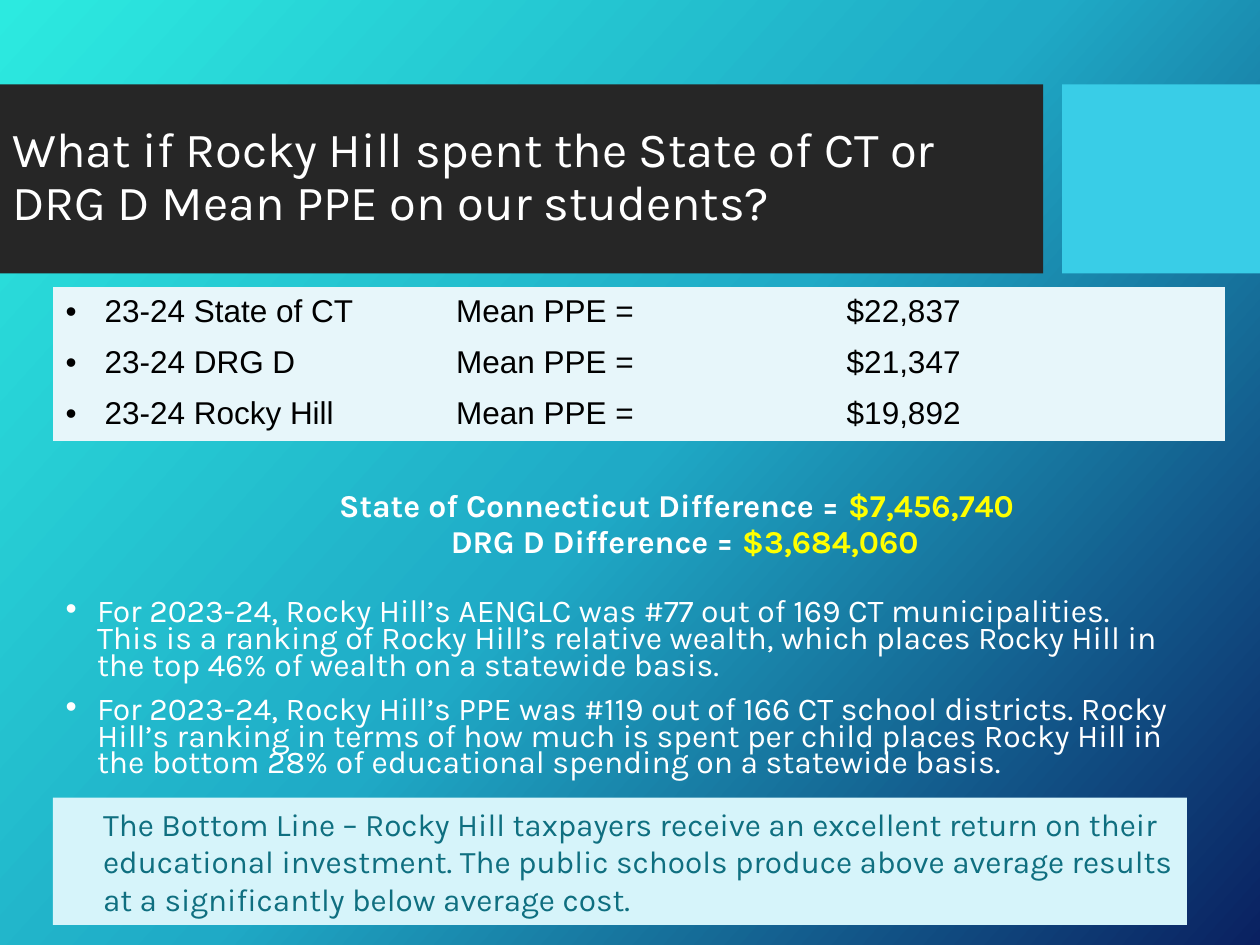
import pptx
import pptx.util
import pptx.oxml
import pptx.oxml.ns
from pptx.dml.color import RGBColor
from pptx.enum.shapes import MSO_SHAPE
from pptx.enum.text import MSO_ANCHOR, MSO_AUTO_SIZE, PP_ALIGN

Inches, Pt = pptx.util.Inches, pptx.util.Pt

# Content
TITLE = "What if Rocky Hill spent the State of CT or DRG D Mean PPE on our students?"
SPENDING = [
    ("23-24 State of CT", "Mean PPE =", "$22,837"),
    ("23-24 DRG D", "Mean PPE =", "$21,347"),
    ("23-24 Rocky Hill", "Mean PPE =", "$19,892"),
]
DIFFERENCES = [  # label, amount, left indent
    ("State of Connecticut Difference = ", "$7,456,740", 0.9),
    ("DRG D Difference = ", "$3,684,060", 1.03),
]
RANKINGS = [  # text, space before
    ("For 2023-24, Rocky Hill’s AENGLC was #77 out of 169 CT municipalities. "
     "This is a ranking of Rocky Hill’s relative wealth, which places Rocky Hill in "
     "the top 46% of wealth on a statewide basis.", 24.3),
    ("For 2023-24, Rocky Hill’s PPE was #119 out of 166 CT school districts. "
     "Rocky Hill’s ranking in terms of how much is spent per child places Rocky Hill in "
     "the bottom 28% of educational spending on a statewide basis.", 10),
]
BOTTOM_LINE = ("The Bottom Line – Rocky Hill taxpayers receive an excellent return on their "
               "educational investment. The public schools produce above average results "
               "at a significantly below average cost.")
BANDS = [(0, 8.28, "262626"), (8.43, 1.57, "39CDE7")]  # left, width, fill

THEME = {
    "gradient": [(0, "2CEAE0"), (50, "1FAAC6"), (100, "0A2161")],
    "angle": 42,
    "cell": "E7F6FA",
    "panel": "D6F4FA",
    "title": {"name": "Karla", "size": Pt(28), "color": "FFFFFF"},
    "body": {"name": "Karla", "size": Pt(18.2), "color": "FFFFFF", "bold": False},
    "label": {"name": "Karla", "size": Pt(18.2), "color": "FFFFFF", "bold": True},
    "amount": {"name": "Karla", "size": Pt(18.2), "color": "FFFF00", "bold": True},
    "table": {"name": "Arial", "size": Pt(18), "color": "000000", "bold": False},
    "panel_text": {"name": "Karla", "size": Pt(18), "color": "0F6F80"},
}
PLAIN_TABLE = "{2D5ABB26-0587-4C30-8999-92F81FD0307C}"


def set_background(s):
    stops = "".join(f'<a:gs pos="{pos * 1000}"><a:srgbClr val="{color}"/></a:gs>'
                    for pos, color in THEME["gradient"])
    s._element.cSld.insert(0, pptx.oxml.parse_xml(
        f'<p:bg {pptx.oxml.ns.nsdecls("p", "a")}><p:bgPr><a:gradFill rotWithShape="1">'
        f'<a:gsLst>{stops}</a:gsLst><a:lin ang="{THEME["angle"] * 60000}" scaled="0"/>'
        '</a:gradFill><a:effectLst/></p:bgPr></p:bg>'))


def place(sp, left, top, width, height):
    sp.left, sp.top, sp.width, sp.height = map(Inches, (left, top, width, height))


def add_run(p, text, style):
    r = p.add_run()
    r.text = text
    for key, value in style.items():
        if key == "color":
            r.font.color.rgb = RGBColor.from_string(value)
        else:
            setattr(r.font, key, value)


def format_paragraph(p, **values):
    for key, value in values.items():
        setattr(p, key, value)


def indent(p, left, hanging=0, bullet=None):
    pPr = p._p.get_or_add_pPr()
    pPr.set("marL", str(Inches(left)))
    pPr.set("indent", str(Inches(-hanging)))
    ns = pptx.oxml.ns.nsdecls("a")
    parts = ([f'<a:buClr {ns}><a:srgbClr val="{bullet}"/></a:buClr>',
              f'<a:buFont {ns} typeface="Arial"/>', f'<a:buChar {ns} char="•"/>']
             if bullet else [f"<a:buNone {ns}/>"])
    for part in parts:
        pPr.append(pptx.oxml.parse_xml(part))


def add_block(s, left, top, width, height, color):
    sp = s.shapes.add_shape(MSO_SHAPE.RECTANGLE, *map(Inches, (left, top, width, height)))
    sp.shadow.inherit = False
    sp.fill.solid()
    sp.fill.fore_color.rgb = RGBColor.from_string(color)
    sp.line.fill.background()
    return sp


def next_paragraph(tf):
    return tf.add_paragraph() if tf.paragraphs[0].runs else tf.paragraphs[0]


def main():
    prs = pptx.Presentation()
    prs.slide_width, prs.slide_height = Inches(10), Inches(7.5)
    s = prs.slides.add_slide(prs.slide_layouts[1])
    set_background(s)

    # Title bands, behind the placeholders
    for i, (left, width, color) in enumerate(BANDS):
        sp = add_block(s, left, 0.67, width, 1.5, color)
        s.shapes._spTree.insert(2 + i, sp._element)

    # Title
    title = s.shapes.title
    place(title, 0, 0.83, 8.33, 1.17)
    tf = title.text_frame
    tf.auto_size, tf.vertical_anchor = MSO_AUTO_SIZE.NONE, MSO_ANCHOR.MIDDLE
    p = tf.paragraphs[0]
    format_paragraph(p, alignment=PP_ALIGN.LEFT, line_spacing=0.9)
    add_run(p, TITLE, THEME["title"])

    # Differences and rankings
    body = s.placeholders[1]
    place(body, 0.42, 3.5, 9, 2.75)
    tf = body.text_frame
    tf.auto_size, tf.vertical_anchor = MSO_AUTO_SIZE.NONE, MSO_ANCHOR.TOP
    tf.margin_top = Inches(0.44)
    for i, (label, amount, left) in enumerate(DIFFERENCES):
        p = next_paragraph(tf)
        format_paragraph(p, alignment=PP_ALIGN.CENTER, line_spacing=0.7,
                         space_before=Pt(5 if i else 0))
        indent(p, left)
        add_run(p, label, THEME["label"])
        add_run(p, amount, THEME["amount"])
    for text, gap in RANKINGS:
        p = next_paragraph(tf)
        format_paragraph(p, line_spacing=0.7, space_before=Pt(gap))
        indent(p, 0.25, 0.25, THEME["body"]["color"])
        add_run(p, text, THEME["body"])

    # Bottom line panel
    panel = add_block(s, 0.42, 6.33, 9, 1.01, THEME["panel"])
    tf = panel.text_frame
    tf.word_wrap = True
    p = tf.paragraphs[0]
    p.alignment = PP_ALIGN.LEFT
    indent(p, 0.3)
    add_run(p, BOTTOM_LINE, THEME["panel_text"])

    # Spending table
    frame = s.shapes.add_table(len(SPENDING), len(SPENDING[0]),
                               *map(Inches, (0.42, 2.28, 9.3, 1.22)))
    table = frame.table
    table.first_row = table.horz_banding = False
    table._tbl.tblPr.find(pptx.oxml.ns.qn("a:tableStyleId")).text = PLAIN_TABLE
    for row, values in zip(table.rows, SPENDING):
        for col, (cell, text) in enumerate(zip(row.cells, values)):
            cell.fill.solid()
            cell.fill.fore_color.rgb = RGBColor.from_string(THEME["cell"])
            p = cell.text_frame.paragraphs[0]
            if col == 0:
                indent(p, 0.31, 0.31, THEME["table"]["color"])
            add_run(p, text, THEME["table"])

    prs.save("out.pptx")


if __name__ == "__main__":
    main()
